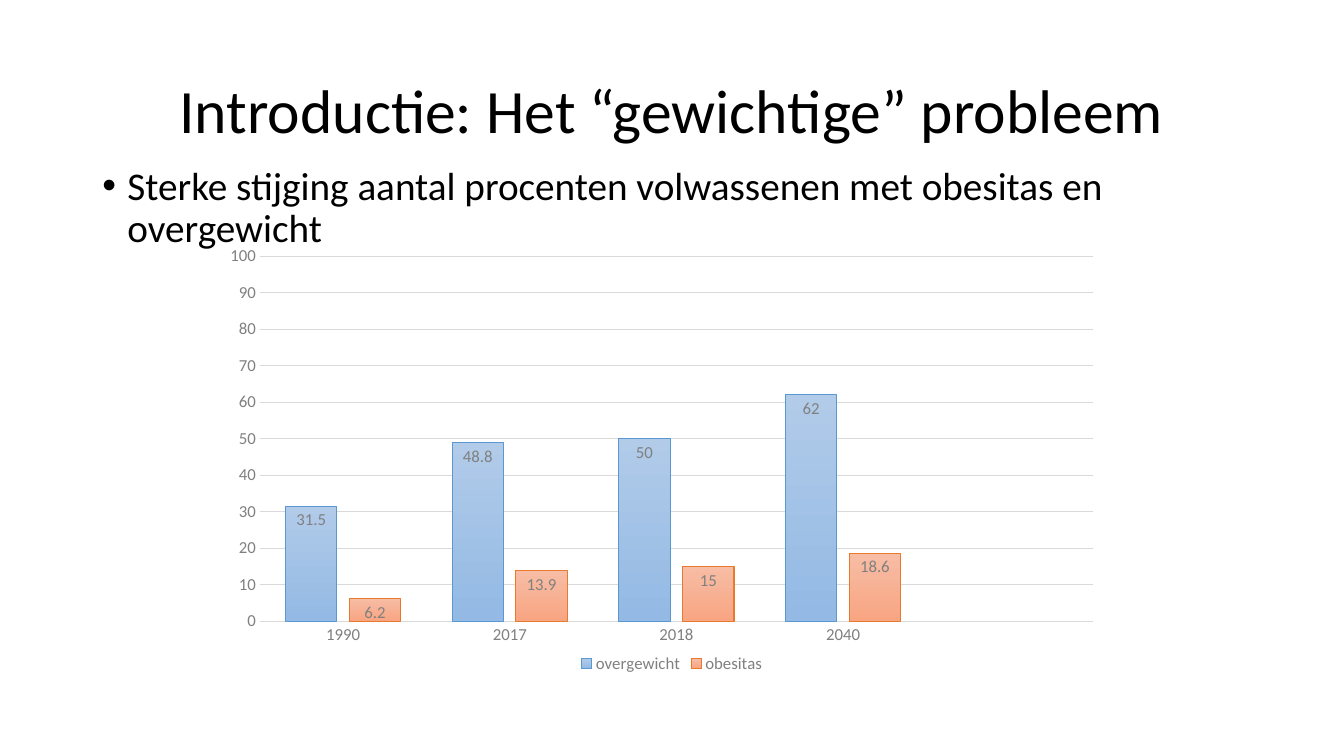
from lxml.etree import SubElement
from pptx import Presentation
from pptx.chart.data import CategoryChartData as Data
from pptx.dml.color import RGBColor as RGB
from pptx.enum.chart import XL_CHART_TYPE as Kind, XL_LABEL_POSITION as Spot
from pptx.enum.chart import XL_LEGEND_POSITION as Side, XL_TICK_MARK as Tick
from pptx.enum.text import MSO_ANCHOR as Anchor, PP_ALIGN as Align
from pptx.oxml.ns import qn
from pptx.util import Pt


def style(font, size, color):
    for key, val in {"name": "Calibri", "size": Pt(size), "bold": False}.items():
        setattr(font, key, val)
    font.color.rgb = RGB.from_string(color)


def stroke(line, color):
    line.width = Pt(0.75)
    line.color.rgb = RGB.from_string(color)


deck = Presentation()
deck.slide_width, deck.slide_height = Pt(960), Pt(540)
slide = deck.slides.add_slide(deck.slide_layouts[6])

texts = [
    ("Introductie: Het “gewichtige” probleem", 28.8, 104.4, 44,
     Anchor.MIDDLE, {"alignment": Align.CENTER, "line_spacing": 0.9}),
    ("Sterke stijging aantal procenten volwassenen met obesitas en overgewicht",
     115.2, 370.8, 28, Anchor.TOP,
     {"alignment": Align.LEFT, "line_spacing": 0.9, "space_before": Pt(10)}),
]
for words, top, high, size, anchor, look in texts:
    box = slide.shapes.add_textbox(Pt(66), Pt(top), Pt(828), Pt(high))
    frame = box.text_frame
    frame.word_wrap = True
    frame.vertical_anchor = anchor
    para = frame.paragraphs[0]
    for key, val in look.items():
        setattr(para, key, val)
    run = para.add_run()
    run.text = words
    style(run.font, size, "000000")

props = para._p.get_or_add_pPr()
props.set("marL", str(Pt(18)))
props.set("indent", str(Pt(-18)))
SubElement(props, qn("a:buFont")).set("typeface", "Arial")
SubElement(props, qn("a:buChar")).set("char", "•")

data = Data()
data.categories = ["1990", "2017", "2018", "2040", ""]
data.add_series("overgewicht", [31.5, 48.8, 50, 62, None])
data.add_series("obesitas", [6.2, 13.9, 15, 18.6, None])
chart = slide.shapes.add_chart(
    Kind.COLUMN_CLUSTERED, Pt(160), Pt(162), Pt(640), Pt(322), data).chart
style(chart.font, 10, "000000")
chart.has_title = False
chart.has_legend = True
for key, val in {"position": Side.BOTTOM, "include_in_layout": False}.items():
    setattr(chart.legend, key, val)
style(chart.legend.font, 12, "808080")

cats, vals = chart.category_axis, chart.value_axis
for axis in (cats, vals):
    axis.major_tick_mark = axis.minor_tick_mark = Tick.NONE
    style(axis.tick_labels.font, 12, "808080")
stroke(cats.format.line, "D9D9D9")
vals.format.line.fill.background()
scale = {"minimum_scale": 0, "maximum_scale": 100, "major_unit": 10,
         "has_major_gridlines": True}
for key, val in scale.items():
    setattr(vals, key, val)
stroke(vals.major_gridlines.format.line, "D9D9D9")

plot = chart.plots[0]
for key, val in {"gap_width": 100, "overlap": -24, "vary_by_categories": False}.items():
    setattr(plot, key, val)
hues = [("B1CBE9", "93B9E4", "5998D0"), ("F7BDA5", "F8A582", "E87A30")]
for bars, (*fade, edge) in zip(plot.series, hues):
    fill = bars.format.fill
    fill.gradient()
    fill.gradient_angle = 270
    for stop, color, pos in zip(fill.gradient_stops, fade, (0, 1)):
        stop.color.rgb = RGB.from_string(color)
        stop.position = pos
    stroke(bars.format.line, edge)
    tags = bars.data_labels
    for key, val in {"show_value": True, "position": Spot.INSIDE_END}.items():
        setattr(tags, key, val)
    style(tags.font, 12, "808080")

area = chart._chartSpace.find(".//" + qn("c:plotArea"))
for old in area.findall(qn("c:layout")):
    area.remove(old)
place = SubElement(area, qn("c:layout"))
area.insert(0, place)
inner = SubElement(place, qn("c:manualLayout"))
rules = {"layoutTarget": "inner", "xMode": "edge", "yMode": "edge",
         "x": 0.04, "y": 0.065, "w": 0.93, "h": 0.81}
for key, val in rules.items():
    SubElement(inner, qn("c:" + key)).set("val", str(val))

deck.save("out.pptx")
